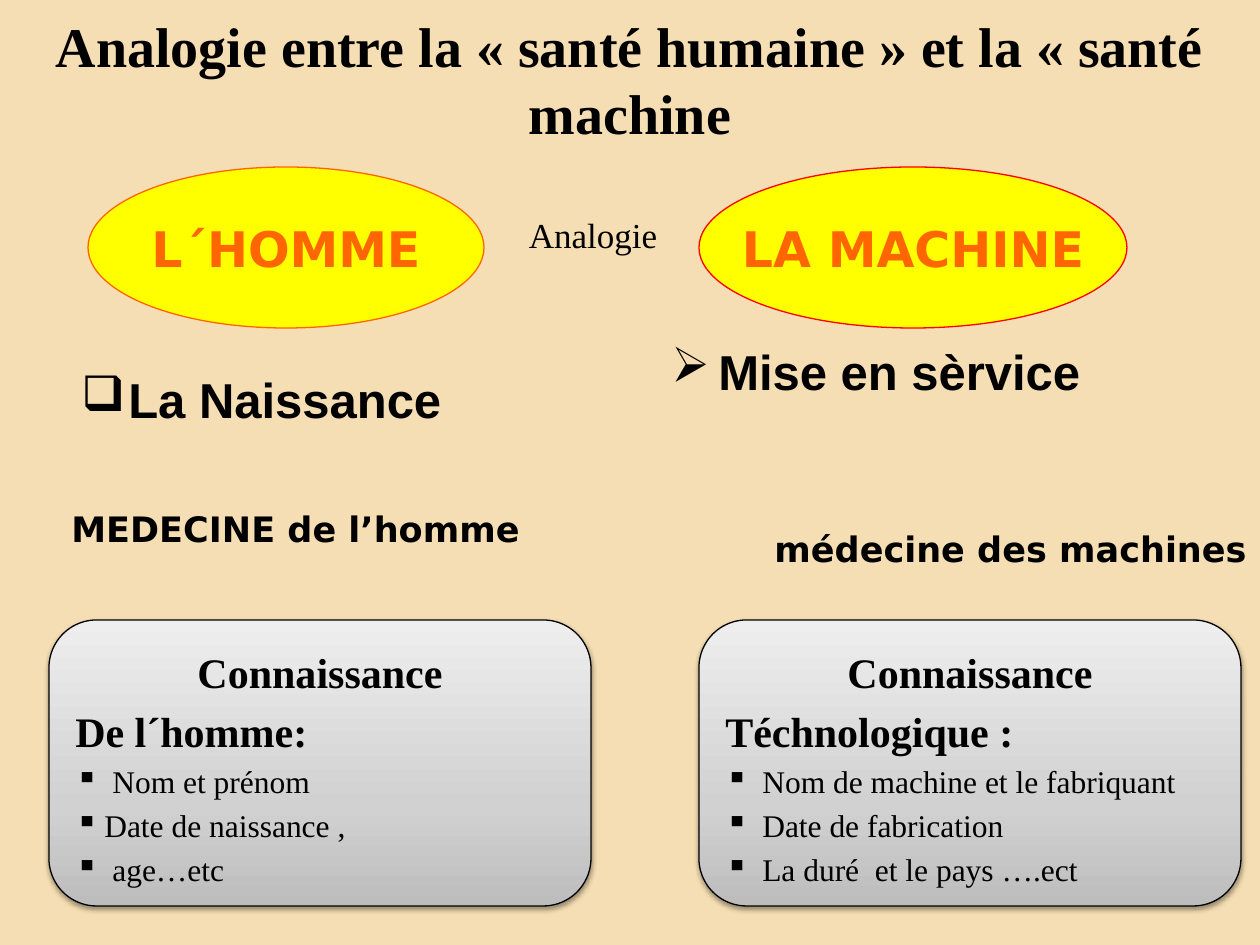
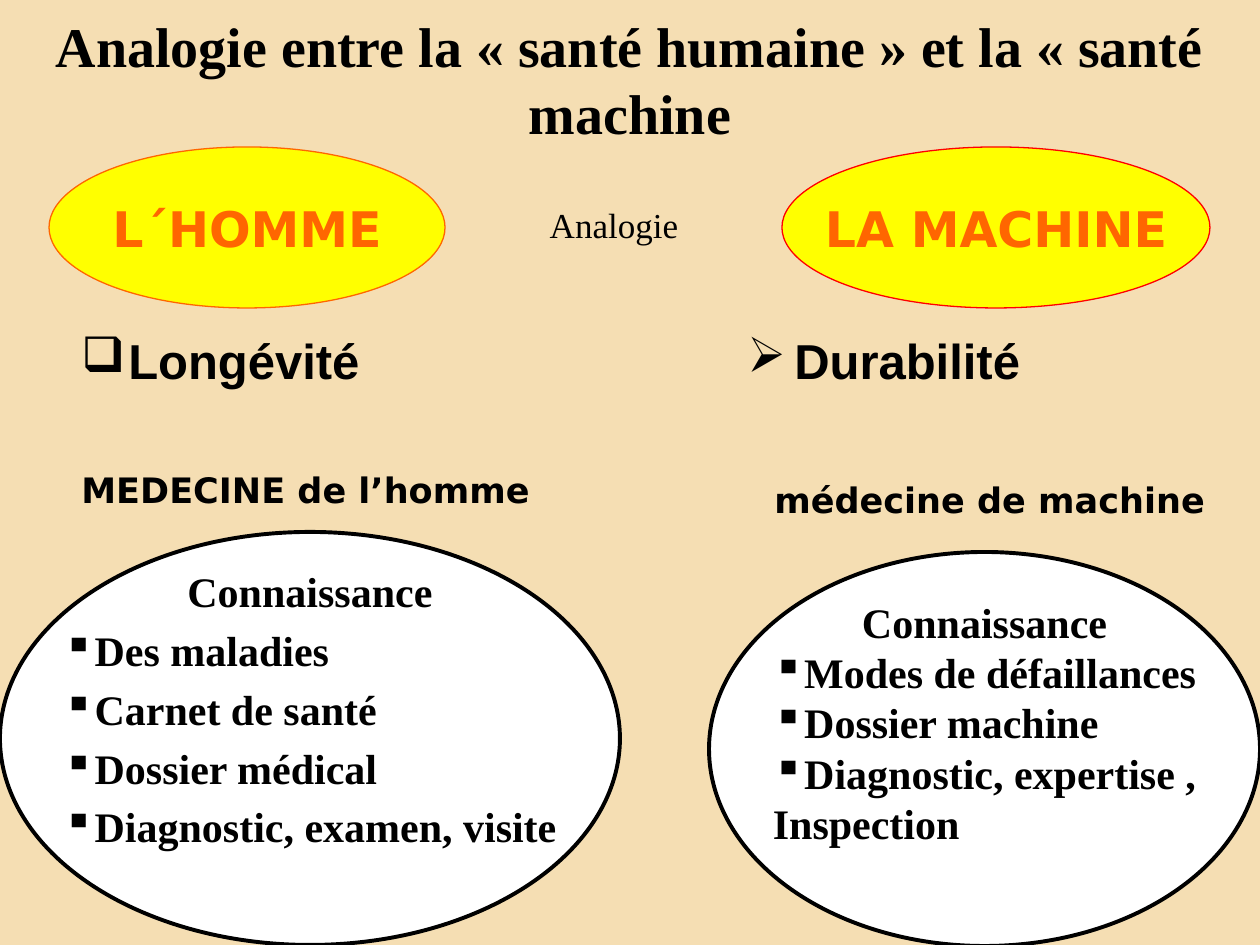
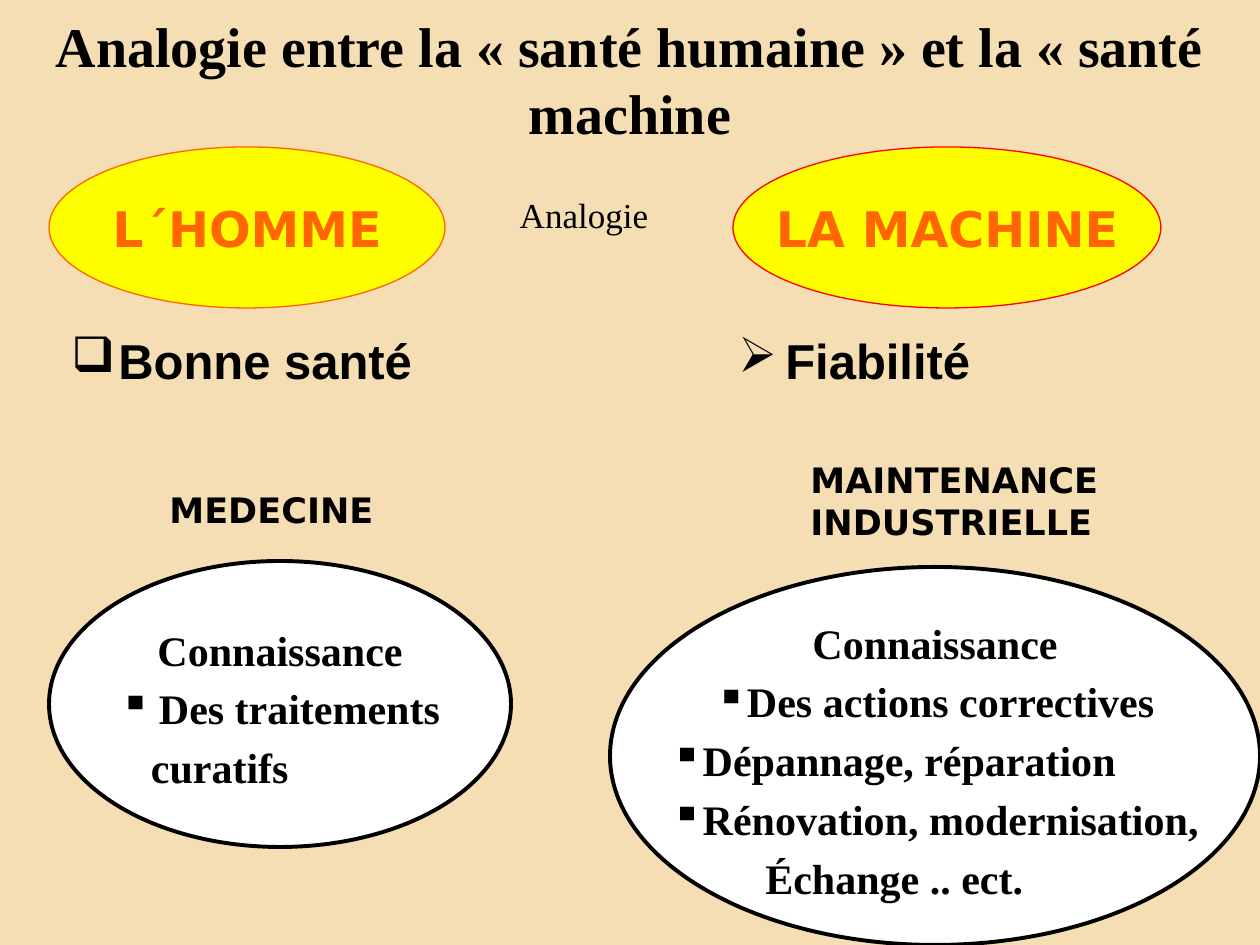
from collections import namedtuple
from copy import deepcopy

from lxml.etree import SubElement
from pptx import Presentation
from pptx.dml.color import RGBColor
from pptx.enum.shapes import MSO_SHAPE
from pptx.enum.text import MSO_ANCHOR, MSO_AUTO_SIZE, PP_ALIGN
from pptx.oxml.ns import qn
from pptx.util import Emu, Pt

SCALE = 914400 / 126  # EMU in one px
TITLE = "Analogie entre la « santé humaine » et la « santé machine"

Para = namedtuple("Para", "text style bullet indent align",
                  defaults=("heading", None, 0, PP_ALIGN.LEFT))


def px(n):
    return Emu(round(n * SCALE))


class Theme:
    """Colours, type styles and paddings shared by the slides."""
    sand = RGBColor(0xF5, 0xDE, 0xB3)
    black = RGBColor(0, 0, 0)
    white = RGBColor(0xFF, 0xFF, 0xFF)
    yellow = RGBColor(0xFF, 0xFF, 0)
    orange = RGBColor(0xFF, 0x66, 0)
    red = RGBColor(0xFF, 0, 0)
    card_stops = ((0, "BDBDBD"), (0.35, "D1D1D1"), (1, "EEEEEE"))
    fonts = {
        "title": dict(name="Times New Roman", size=Pt(32), bold=True),
        "oval": dict(name="DejaVu Sans", size=Pt(28), bold=True),
        "stage": dict(name="Arial", size=Pt(28), bold=True),
        "label": dict(name="DejaVu Sans", size=Pt(20), bold=True),
        "link": dict(name="Times New Roman", size=Pt(20), bold=False),
        "heading": dict(name="Times New Roman", size=Pt(24), bold=True),
        "detail": dict(name="Times New Roman", size=Pt(18), bold=False),
    }
    text_colors = {"oval": orange}
    gap = 0.2         # space before a line, as a share of its type size
    pad_top = 21      # top padding of the knowledge shapes
    pad_bottom = 13
    hang = 29         # hanging indent of a square bullet


class Deck:
    def __init__(self, theme):
        self.theme = theme
        self.prs = Presentation()
        self.prs.slide_width, self.prs.slide_height = px(1260), px(945)
        fill = self.prs.slide_master.background.fill
        fill.solid()
        fill.fore_color.rgb = theme.sand
        self.s = None

    def new_slide(self):
        self.s = self.prs.slides.add_slide(self.prs.slide_layouts[5])
        sp = self.s.shapes.title
        sp.left, sp.top, sp.width, sp.height = map(px, (0, 0, 1260, 158))
        self.set_text(sp, [Para(TITLE, "title", align=PP_ALIGN.CENTER)],
                      vertical_anchor=MSO_ANCHOR.MIDDLE)

    # Text
    def set_text(self, sp, paras, gap=0, **frame):
        tf = sp.text_frame
        values = dict(word_wrap=True, auto_size=MSO_AUTO_SIZE.NONE) | frame
        for key, value in values.items():
            setattr(tf, key, value)
        for i, para in enumerate(paras):
            p = tf.paragraphs[0] if i == 0 else tf.add_paragraph()
            font = self.theme.fonts[para.style]
            p.alignment = para.align
            p.space_before = Pt(round(font["size"].pt * gap, 2) if i else 0)
            self.indent(p, para)
            r = p.add_run()
            r.text = para.text
            for key, value in font.items():
                setattr(r.font, key, value)
            r.font.color.rgb = self.theme.text_colors.get(para.style, self.theme.black)

    def indent(self, p, para):
        pPr = p._p.get_or_add_pPr()
        pPr.set("marL", str(px(para.indent)))
        pPr.set("indent", str(-px(para.indent) if para.bullet else 0))
        if para.bullet:
            SubElement(pPr, qn("a:buChar")).set("char", para.bullet)
        else:
            SubElement(pPr, qn("a:buNone"))

    def text_box(self, box, paras, **frame):
        sp = self.s.shapes.add_textbox(*map(px, box))
        self.set_text(sp, paras, **frame)

    def stage(self, x, y, text, bullet):
        """Bulleted stage of life under an oval."""
        self.text_box((x, y, 525, 126), [Para(text, "stage", bullet, 47)],
                      margin_top=px(16))

    def link(self, x, y):
        self.text_box((x, y, 184, 55), [Para("Analogie", "link", align=PP_ALIGN.CENTER)])

    def label(self, x, y, w, *lines):
        self.text_box((x, y, w, 13 + 42 * len(lines)),
                      [Para(line, "label") for line in lines],
                      word_wrap=False, auto_size=MSO_AUTO_SIZE.SHAPE_TO_FIT_TEXT)

    # Shapes
    def shape(self, kind, box, line, width, fill=None):
        sp = self.s.shapes.add_shape(kind, *map(px, box))
        sp.shadow.inherit = False
        sp.line.color.rgb = line
        sp.line.width = Pt(width)
        if fill is not None:
            sp.fill.solid()
            sp.fill.fore_color.rgb = fill
        return sp

    def oval(self, x, y, w, text, line):
        sp = self.shape(MSO_SHAPE.OVAL, (x, y, w, 161), line, 0.75, self.theme.yellow)
        self.set_text(sp, [Para(text, "oval", align=PP_ALIGN.CENTER)],
                      word_wrap=False, vertical_anchor=MSO_ANCHOR.MIDDLE)

    def heads(self, y, homme_x, machine_x):
        self.oval(homme_x, y, 396, "L´HOMME", self.theme.orange)
        self.oval(machine_x, y, 428, "LA MACHINE", self.theme.red)

    def knowledge(self, sp, paras, wrap, tail=0, gap=Theme.gap):
        """Fill a shape with the heading and its list; tail lifts the text."""
        t = self.theme
        heading = Para("Connaissance", align=PP_ALIGN.CENTER)
        self.set_text(sp, [heading, *paras], gap,
                      word_wrap=wrap, vertical_anchor=MSO_ANCHOR.MIDDLE,
                      margin_top=px(t.pad_top), margin_bottom=px(t.pad_bottom + tail))

    def bubble(self, box, paras, **spacing):
        sp = self.shape(MSO_SHAPE.OVAL, box, self.theme.black, 2.25, self.theme.white)
        self.knowledge(sp, paras, False, **spacing)

    def card(self, x, paras):
        sp = self.shape(MSO_SHAPE.ROUNDED_RECTANGLE, (x, 620, 542, 286),
                        self.theme.black, 0.75)
        # Three-stop gradient, dark at the foot
        sp.fill.gradient()
        sp.fill.gradient_angle = 90
        spPr = sp._element.spPr
        stops = spPr.find(".//" + qn("a:gsLst"))
        stops.append(deepcopy(stops[-1]))
        for stop, (pos, rgb) in zip(sp.fill.gradient_stops, self.theme.card_stops):
            stop.position = pos
            stop.color.rgb = RGBColor.from_string(rgb)
        # Soft shadow below
        shadow = SubElement(spPr.find(qn("a:effectLst")), qn("a:outerShdw"),
                            blurRad="40000", dist="20000", dir="5400000", rotWithShape="0")
        color = SubElement(shadow, qn("a:srgbClr"), val="000000")
        SubElement(color, qn("a:alpha"), val="38000")
        self.knowledge(sp, paras, True)


def item(text, style="heading", indent=Theme.hang, align=PP_ALIGN.LEFT):
    return Para(text, style, "▪", indent, align)


def birth(deck):
    deck.new_slide()
    deck.stage(69, 354, "La Naissance", "❑")
    deck.stage(659, 325, "Mise en sèrvice", "➢")
    deck.heads(167, 88, 699)
    deck.link(501, 207)
    deck.label(59, 501, 491, "MEDECINE de l’homme")
    deck.label(762, 521, 498, "médecine des machines")
    deck.card(49, [Para("De l´homme:"),
                   item("Nom et prénom", "detail", 37),
                   item("Date de naissance ,", "detail"),
                   item("age…etc", "detail", 37)])
    machine = ("Nom de machine et le fabriquant", "Date de fabrication",
               "La duré  et le pays ….ect")
    deck.card(699, [Para("Téchnologique :"),
                    *(item(text, "detail", 37) for text in machine)])


def longevity(deck):
    deck.new_slide()
    deck.stage(69, 315, "Longévité", "❑")
    deck.stage(735, 315, "Durabilité", "➢")
    deck.heads(147, 49, 782)
    deck.bubble((0, 532, 620, 413),
                [item(text) for text in ("Des maladies", "Carnet de santé",
                                         "Dossier médical",
                                         "Diagnostic, examen, visite")], tail=68)
    deck.bubble((709, 552, 551, 394),
                [*(item(text) for text in ("Modes de défaillances", "Dossier machine",
                                           "Diagnostic, expertise ,")),
                 Para("Inspection")], tail=62, gap=0)
    deck.link(522, 197)
    deck.label(69, 462, 491, "MEDECINE de l’homme")
    deck.label(762, 472, 456, "médecine de machine")


def health(deck):
    deck.new_slide()
    deck.stage(59, 315, "Bonne santé", "❑")
    deck.stage(726, 315, "Fiabilité", "➢")
    deck.heads(147, 49, 733)
    deck.bubble((49, 561, 462, 286),
                [item("Des traitements", indent=39), Para("curatifs", indent=31)])
    deck.bubble((610, 567, 650, 378),
                [item("Des actions correctives", align=PP_ALIGN.CENTER),
                 item("Dépannage, réparation"),
                 item("Rénovation, modernisation,"),
                 Para("Échange .. ect.", indent=94)])
    deck.label(798, 452, 334, "MAINTENANCE", "INDUSTRIELLE")
    deck.label(157, 482, 247, "MEDECINE")
    deck.link(492, 187)


def main():
    deck = Deck(Theme())
    for build in (birth, longevity, health):
        build(deck)
    deck.prs.save("out.pptx")


if __name__ == "__main__":
    main()
